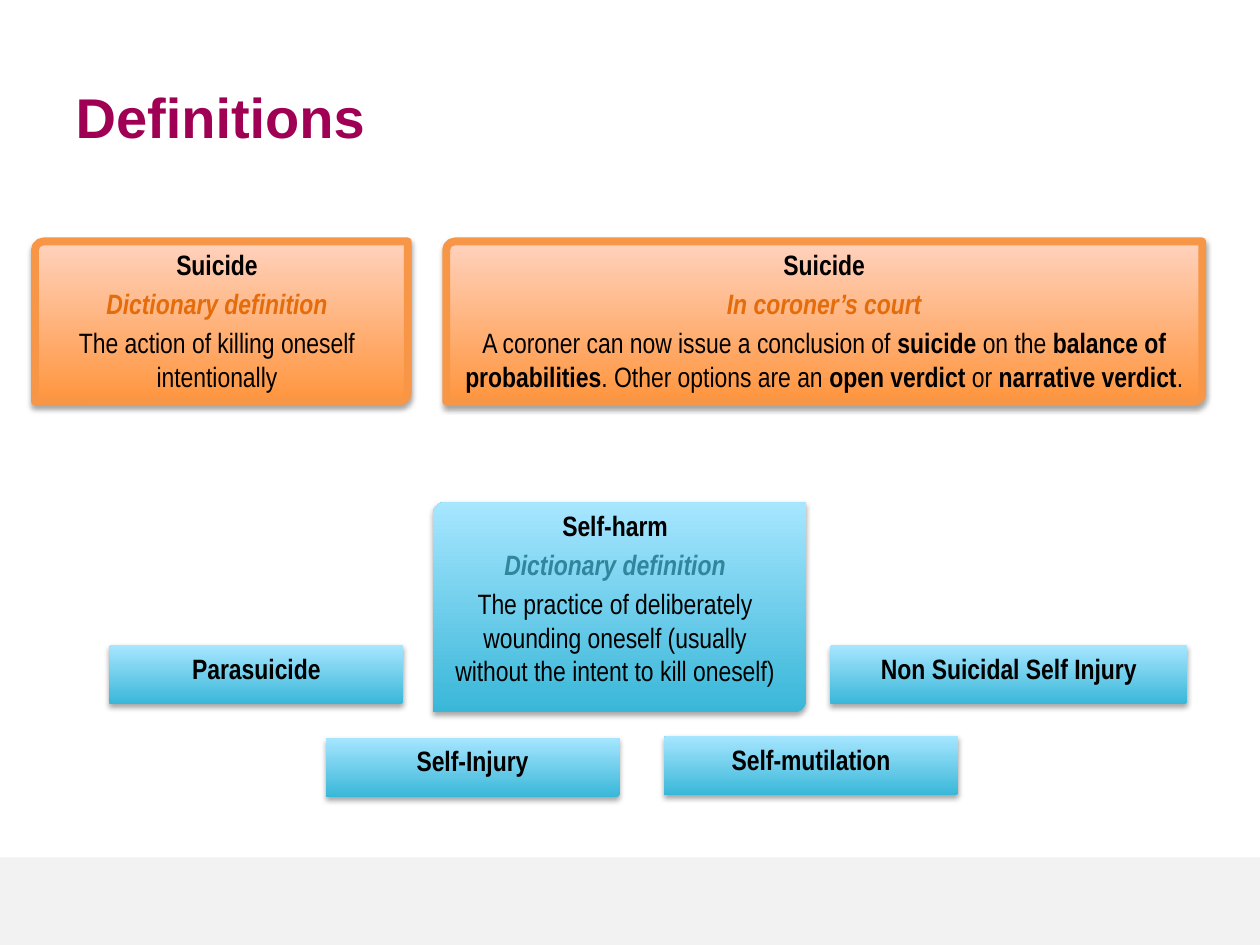
from lxml.etree import SubElement
from pptx import Presentation
from pptx.dml.color import RGBColor
from pptx.enum.shapes import MSO_SHAPE
from pptx.enum.text import MSO_ANCHOR, PP_ALIGN
from pptx.oxml.ns import qn
from pptx.util import Pt

COLORS = {
    "title": "A00054",
    "text": "000000",
    "band": "F2F2F2",
    "orange_dark": "FF953E",
    "orange_light": "FFD2BD",
    "orange_line": "F79646",
    "orange_text": "E46C0A",
    "blue_dark": "39B7D8",
    "blue_light": "A7E6FF",
    "blue_text": "31859C",
}


def rgb(name):
    return RGBColor.from_string(COLORS[name])


def add_run(paragraph, text, size=16, font="Arial Narrow", color="text", bold=False, italic=False):
    run = paragraph.add_run()
    run.text = text
    run.font.size = Pt(size)
    run.font.name = font
    run.font.color.rgb = rgb(color)
    run.font.bold = bold
    run.font.italic = italic


def add_shadow(shape):
    shape.shadow.inherit = False
    effects = shape._element.spPr.find(qn("a:effectLst"))
    shadow = SubElement(effects, qn("a:outerShdw"), blurRad=str(Pt(3.1)), dist=str(Pt(1.8)),
                        dir="5400000", rotWithShape="0")
    color = SubElement(shadow, qn("a:srgbClr"), val="000000")
    SubElement(color, qn("a:alpha"), val="35000")


def add_panel(shapes, left, top, width, height, theme, outlined):
    panel = shapes.add_shape(MSO_SHAPE.ROUND_2_DIAG_RECTANGLE,
                             Pt(left), Pt(top), Pt(width), Pt(height))
    panel.adjustments[0] = 0.054
    panel.adjustments[1] = 0
    # Dark at the bottom, light at the top
    panel.fill.gradient()
    panel.fill.gradient_angle = 90
    for stop, shade in zip(panel.fill.gradient_stops, ("dark", "light")):
        stop.color.rgb = rgb(f"{theme}_{shade}")
    if outlined:
        panel.line.color.rgb = rgb(f"{theme}_line")
        panel.line.width = Pt(4.5)
    else:
        panel.line.fill.background()
    add_shadow(panel)


def add_card(slide, left, top, width, height, term, theme="blue", source=None,
             definition=(), text_width=None, text_height=None, outlined=False):
    """Group a panel with its text; definition holds (text, bold) pairs."""
    shapes = slide.shapes.add_group_shape().shapes
    add_panel(shapes, left, top, width, height, theme, outlined)

    box = shapes.add_textbox(Pt(left), Pt(top), Pt(text_width or width), Pt(text_height or height))
    frame = box.text_frame
    frame.word_wrap = True
    add_run(frame.paragraphs[0], term, bold=True)
    if source:
        add_run(frame.add_paragraph(), source, color=f"{theme}_text", bold=True, italic=True)
        paragraph = frame.add_paragraph()
        for text, bold in definition:
            add_run(paragraph, text, bold=bold)
    for index, paragraph in enumerate(frame.paragraphs):
        paragraph.alignment = PP_ALIGN.CENTER
        paragraph.space_before = Pt(3.2 if index else 0)


def add_title(slide, text):
    title = slide.shapes.title
    title.left, title.top, title.width, title.height = Pt(36), Pt(40), Pt(612), Pt(53)
    title.text_frame.vertical_anchor = MSO_ANCHOR.MIDDLE
    paragraph = title.text_frame.paragraphs[0]
    paragraph.alignment = PP_ALIGN.LEFT
    add_run(paragraph, text, size=32, font="Arial", color="title", bold=True)


def add_footer_band(slide):
    band = slide.shapes.add_shape(MSO_SHAPE.RECTANGLE, Pt(0), Pt(490), Pt(720), Pt(50))
    band.shadow.inherit = False
    band.fill.solid()
    band.fill.fore_color.rgb = rgb("band")
    band.line.fill.background()


def main():
    presentation = Presentation()
    presentation.slide_width, presentation.slide_height = Pt(720), Pt(540)
    slide = presentation.slides.add_slide(presentation.slide_layouts[5])
    add_footer_band(slide)
    add_title(slide, "Definitions")

    # Suicide: dictionary and legal meaning
    add_card(slide, 20, 138, 213, 91.5, "Suicide", theme="orange", outlined=True,
             source="Dictionary definition", text_width=208,
             definition=[("The action of killing oneself intentionally", False)])
    add_card(slide, 255, 138, 432, 91.5, "Suicide", theme="orange", outlined=True,
             source="In coroner’s court",
             definition=[("A coroner can now issue a conclusion of ", False),
                         ("suicide", True),
                         (" on the ", False),
                         ("balance of probabilities", True),
                         (". Other options are an ", False),
                         ("open verdict", True),
                         (" or ", False),
                         ("narrative verdict", True),
                         (".", False)])

    # Self-harm and its related terms
    add_card(slide, 247.5, 287, 213, 120, "Self-harm",
             source="Dictionary definition", text_width=208, text_height=91.5,
             definition=[("The practice of deliberately wounding oneself "
                          "(usually without the intent to kill oneself)", False)])
    for term, left, top, width in (("Parasuicide", 62.5, 368.5, 168),
                                   ("Non Suicidal Self Injury", 474.5, 368.5, 204),
                                   ("Self-Injury", 186, 421.5, 168),
                                   ("Self-mutilation", 379.5, 420.5, 168)):
        add_card(slide, left, top, width, 34, term)

    presentation.save("out.pptx")


if __name__ == "__main__":
    main()
